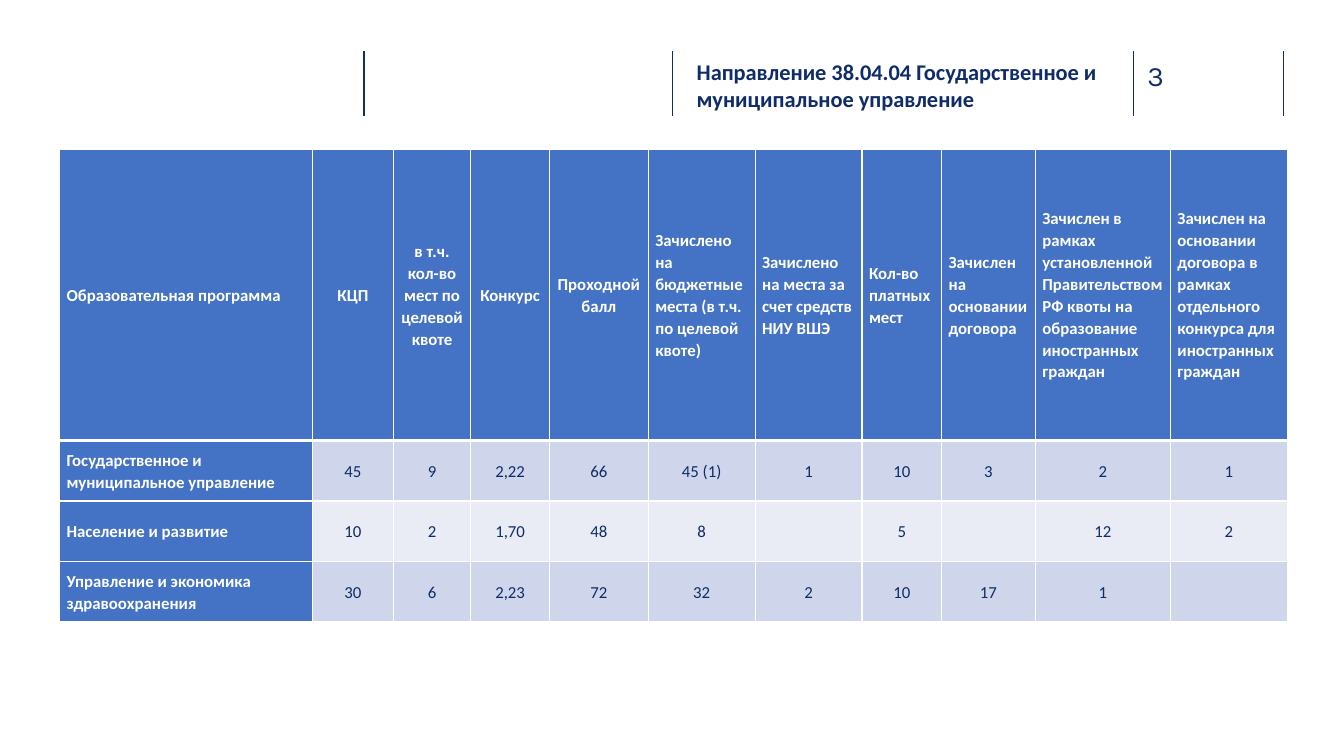
from dataclasses import dataclass

from lxml.etree import SubElement
from pptx import Presentation
from pptx.dml.color import RGBColor
from pptx.enum.shapes import MSO_CONNECTOR
from pptx.enum.text import MSO_ANCHOR, PP_ALIGN
from pptx.oxml import parse_xml
from pptx.oxml.ns import nsdecls, qn
from pptx.slide import Slide
from pptx.table import _Cell
from pptx.text.text import TextFrame
from pptx.util import Inches, Pt

NAVY = "0F2C68"
RULE = "102D69"
BLUE = "4472C4"
WHITE = "FFFFFF"
BANDS = ("CFD5EA", "E9EBF5")
LEFT, MID = PP_ALIGN.LEFT, PP_ALIGN.CENTER
HEAD = {"name": "Calibri", "size": Pt(12), "bold": True}
BODY = HEAD | {"bold": False}
TITLE = HEAD | {"size": Pt(16)}
PAGE = {"name": "Karla", "size": Pt(20), "bold": False}
FLUSH = dict.fromkeys(
    ("margin_left", "margin_top", "margin_right", "margin_bottom"), 0)
INSET = FLUSH | {"margin_left": Inches(0.07), "margin_right": Inches(0.07)}
RULES = (3.61, 6.67, 11.24, 12.73)


@dataclass
class Column:
    label: str
    width: float
    align: PP_ALIGN
    values: tuple[str, str, str]


COLUMNS = (
    Column("Образовательная программа", 2.51, LEFT,
           ("Государственное и муниципальное управление",
            "Население и развитие",
            "Управление и экономика здравоохранения")),
    Column("КЦП", 0.8, MID, ("45", "10", "30")),
    Column("в т.ч. кол-во мест по целевой квоте", 0.77, MID, ("9", "2", "6")),
    Column("Конкурс", 0.78, MID, ("2,22", "1,70", "2,23")),
    Column("Проходной балл", 0.98, MID, ("66", "48", "72")),
    Column("Зачислено на бюджетные места (в т.ч. по целевой квоте)",
           1.06, LEFT, ("45 (1)", "8", "32")),
    Column("Зачислено на места за счет средств НИУ ВШЭ",
           1.06, LEFT, ("1", "", "2")),
    Column("Кол-во платных мест", 0.79, LEFT, ("10", "5", "10")),
    Column("Зачислен на основании договора", 0.93, LEFT, ("3", "", "17")),
    Column("Зачислен в рамках установленной Правительством РФ квоты "
           "на образование иностранных граждан",
           1.34, LEFT, ("2", "12", "1")),
    Column("Зачислен на основании договора в рамках отдельного конкурса "
           "для иностранных граждан",
           1.16, LEFT, ("1", "2", "")),
)
ROWS = (2.89, 0.6, 0.6, 0.6)


def paint(hue: str) -> RGBColor:
    return RGBColor.from_string(hue)


def apply(target: object, values: dict) -> None:
    for key, value in values.items():
        setattr(target, key, value)


def write(frame: TextFrame, text: str, look: dict, hue: str,
          align: PP_ALIGN = LEFT, space: float = 1.0) -> None:
    frame.text = text
    frame.word_wrap = True
    line = frame.paragraphs[0]
    apply(line, {"alignment": align, "line_spacing": space})
    apply(line.font, look)
    line.font.color.rgb = paint(hue)


def edge(cell: _Cell, top: int, base: int) -> None:
    frame = cell._tc.get_or_add_tcPr()
    sides = (("L", 1), ("R", 1), ("T", top), ("B", base))
    for spot, (side, width) in enumerate(sides):
        frame.insert(spot, parse_xml(
            f'<a:ln{side} {nsdecls("a")} w="{Pt(width)}"><a:solidFill>'
            f'<a:srgbClr val="{WHITE}"/></a:solidFill></a:ln{side}>'))


def rule(slide: Slide, x: float) -> None:
    line = slide.shapes.add_connector(
        MSO_CONNECTOR.STRAIGHT,
        Inches(x), Inches(0.51), Inches(x), Inches(1.15))
    line.line.color.rgb = paint(RULE)
    line.line.width = Pt(1)
    SubElement(line._element.spPr, qn("a:effectLst"))


def title(slide: Slide) -> None:
    shape = slide.shapes.title
    apply(shape, {"left": Inches(6.91), "top": Inches(0.58),
                  "width": Inches(4.13), "height": Inches(0.45)})
    apply(shape.text_frame, FLUSH | {"vertical_anchor": MSO_ANCHOR.TOP})
    write(shape.text_frame,
          "Направление 38.04.04 Государственное и муниципальное управление",
          TITLE, NAVY)


def number(slide: Slide) -> None:
    box = slide.shapes.add_textbox(
        Inches(11.38), Inches(0.58), Inches(0.73), Inches(0.34))
    apply(box.text_frame, FLUSH)
    write(box.text_frame, "3", PAGE, RULE)


def fill(cell: _Cell, row: int, col: int) -> None:
    column = COLUMNS[col]
    head = row == 0 or col == 0
    text = (column.label, *column.values)[row]
    align = column.align if head else MID
    apply(cell, INSET | {"vertical_anchor": MSO_ANCHOR.MIDDLE})
    cell.fill.solid()
    cell.fill.fore_color.rgb = paint(BLUE if head else BANDS[(row - 1) % 2])
    write(cell.text_frame, text, HEAD if head else BODY,
          WHITE if head else NAVY, align, 1.07)
    edge(cell, 3 if row == 1 else 1, 3 if row == 0 else 1)


def grid(slide: Slide) -> None:
    table = slide.shapes.add_table(
        len(ROWS), len(COLUMNS), Inches(0.59), Inches(1.48),
        Inches(sum(c.width for c in COLUMNS)), Inches(sum(ROWS))).table
    table.first_col = True
    for part, column in zip(table.columns, COLUMNS):
        part.width = Inches(column.width)
    for row, height in enumerate(ROWS):
        table.rows[row].height = Inches(height)
        for col in range(len(COLUMNS)):
            fill(table.cell(row, col), row, col)


def main() -> None:
    deck = Presentation()
    apply(deck, {"slide_width": Inches(13.33), "slide_height": Inches(7.5)})
    slide = deck.slides.add_slide(deck.slide_layouts[5])
    for x in RULES:
        rule(slide, x)
    number(slide)
    title(slide)
    grid(slide)
    deck.save("out.pptx")


if __name__ == "__main__":
    main()
